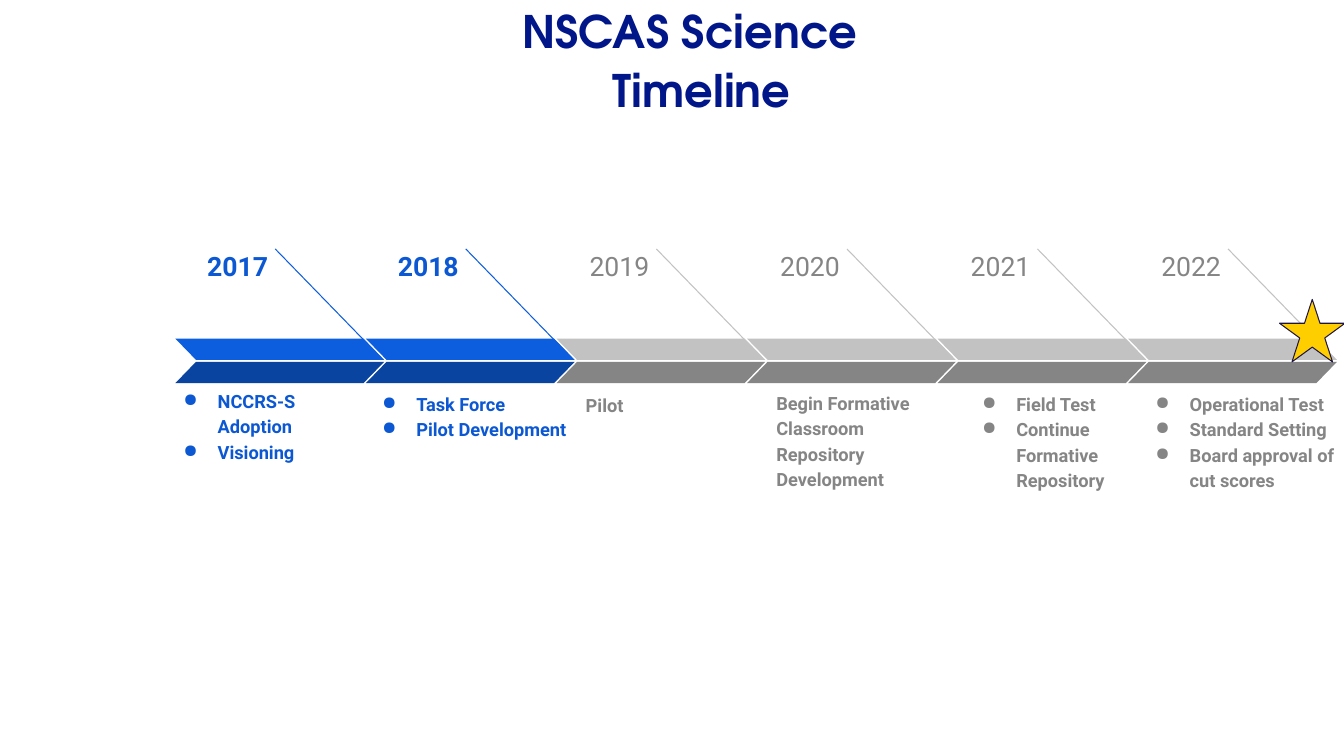
from lxml.etree import SubElement
from pptx import Presentation
from pptx.dml.color import RGBColor
from pptx.enum.shapes import MSO_CONNECTOR as CONNECTOR, MSO_SHAPE as SHAPE
from pptx.enum.text import MSO_ANCHOR as ANCHOR, MSO_AUTO_SIZE as AUTO_SIZE, PP_ALIGN as ALIGN
from pptx.oxml.ns import qn
from pptx.util import Inches, Pt

BLUE = {"text": "0C58D3", "top": "0D5DDF", "bottom": "0944A1"}
GRAY = {"text": "858585", "top": "C2C2C2", "bottom": "858585"}
FIRST_LEFT, STEP = 1.74, 1.89

# year, palette, bold year, bulleted, items, text box
MILESTONES = [
    ("2017", BLUE, True, True, ["NCCRS-S Adoption", "Visioning"], (1.53, 3.93, 2.27, 0.79)),
    ("2018", BLUE, True, True, ["Task Force", "Pilot Development"], (3.5, 3.85, 2.27, 0.65)),
    ("2019", GRAY, False, False, ["Pilot"], (5.68, 3.8, 1.7, 0.46)),
    ("2020", GRAY, False, False, ["Begin Formative Classroom Repository Development"],
     (7.57, 3.81, 1.78, 1.18)),
    ("2021", GRAY, False, True, ["Field Test", "Continue Formative Repository"],
     (9.45, 4.26, 2.12, 0.74)),
    ("2022", GRAY, False, True,
     ["Operational Test", "Standard Setting", "Board approval of cut scores"],
     (11.17, 3.37, 2.23, 1.63)),
]


def rgb(color):
    """Turn a hex string into a colour."""
    return RGBColor.from_string(color)


def add_run(paragraph, text, font_name, size, color, bold):
    """Add one formatted run to a paragraph."""
    run = paragraph.add_run()
    run.text = text
    run.font.name = font_name
    run.font.size = Pt(size)
    run.font.bold = bold
    run.font.color.rgb = rgb(color)


def add_bullet(paragraph, color):
    """Give a paragraph a hanging round bullet."""
    properties = paragraph._p.get_or_add_pPr()
    properties.set("marL", str(Inches(0.5)))
    properties.set("indent", str(Inches(-0.34)))
    bullet_color = SubElement(properties, qn("a:buClr"))
    SubElement(bullet_color, qn("a:srgbClr")).set("val", color)
    SubElement(properties, qn("a:buChar")).set("char", "●")


def set_frame(frame, inset, anchor):
    """Set wrapping, margins and anchor of a text frame."""
    frame.word_wrap = True
    frame.auto_size = AUTO_SIZE.NONE
    frame.vertical_anchor = anchor
    frame.margin_left = frame.margin_right = Inches(inset)
    frame.margin_top = frame.margin_bottom = Inches(inset)


def add_text(shapes, box, items, size, color, bold, anchor, align=ALIGN.LEFT, bulleted=False):
    """Add a text box with one paragraph per item."""
    frame = shapes.add_textbox(*map(Inches, box)).text_frame
    set_frame(frame, 0.13, anchor)
    for index, item in enumerate(items):
        paragraph = frame.add_paragraph() if index else frame.paragraphs[0]
        if bulleted:
            add_bullet(paragraph, color)
        paragraph.alignment = align
        paragraph.line_spacing = 1.15
        add_run(paragraph, item, "Roboto", size, color, bold)


def add_filled(shapes, kind, box, fill, line=None):
    """Add a flat preset shape, outlined only when a line colour is given."""
    shape = shapes.add_shape(kind, *map(Inches, box))
    shape.shadow.inherit = False
    shape.fill.solid()
    shape.fill.fore_color.rgb = rgb(fill)
    if line:
        shape.line.color.rgb = rgb(line)
        shape.line.width = Pt(0.75)
    else:
        shape.line.fill.background()
    return shape


def add_leader(shapes, start, end, color):
    """Add a thin slanted line."""
    leader = shapes.add_connector(CONNECTOR.STRAIGHT, *map(Inches, start + end))
    leader.line.color.rgb = rgb(color)
    leader.line.width = Pt(0.75)
    SubElement(leader._element.spPr, qn("a:effectLst"))


def add_milestone(slide, left, year, palette, bold_year, bulleted, items, box):
    """Add one year with its leader, arrow band and description."""
    shapes = slide.shapes.add_group_shape().shapes
    add_leader(shapes, (left + 0.99, 2.47), (left + 2.04, 3.55), palette["top"])
    for top, part in ((3.36, "top"), (3.59, "bottom")):
        band = add_filled(shapes, SHAPE.PARALLELOGRAM, (left, top, 2.07, 0.21), palette[part])
        band.adjustments[0] = 0.97
        if part == "top":
            band._element.spPr.xfrm.set("flipH", "1")
    add_text(shapes, box, items, 13, palette["text"], True, ANCHOR.BOTTOM, bulleted=bulleted)
    add_text(shapes, (left + 0.14, 2.3, 0.91, 0.35), [year], 19, palette["text"],
             bold_year, ANCHOR.TOP, ALIGN.RIGHT)


def add_title(slide):
    """Fill the title placeholder with two centred lines."""
    title = slide.shapes.title
    title.left, title.top, title.width, title.height = map(Inches, (0, 0, 13.08, 1.28))
    frame = title.text_frame
    set_frame(frame, 0.1, ANCHOR.TOP)
    for index, (text, indent) in enumerate((("NSCAS Science", 0.61), ("Timeline", 0.84))):
        paragraph = frame.add_paragraph() if index else frame.paragraphs[0]
        properties = paragraph._p.get_or_add_pPr()
        properties.set("marL", str(Inches(indent)))
        properties.set("indent", "0")
        paragraph.alignment = ALIGN.CENTER
        paragraph.line_spacing = 0.9
        paragraph.space_before = Pt(7.5 if index else 0)
        add_run(paragraph, text, "TeX Gyre Adventor", 32, "001689", True)


def main():
    """Build and save the timeline slide."""
    presentation = Presentation()
    presentation.slide_width = Inches(13.33)
    presentation.slide_height = Inches(7.5)
    slide = presentation.slides.add_slide(presentation.slide_layouts[5])
    add_title(slide)
    for index, milestone in enumerate(MILESTONES):
        add_milestone(slide, FIRST_LEFT + index * STEP, *milestone)
    add_filled(slide.shapes, SHAPE.STAR_5_POINT, (12.69, 2.97, 0.65, 0.62), "FFCE00", "1F1646")
    presentation.save("out.pptx")


if __name__ == "__main__":
    main()
